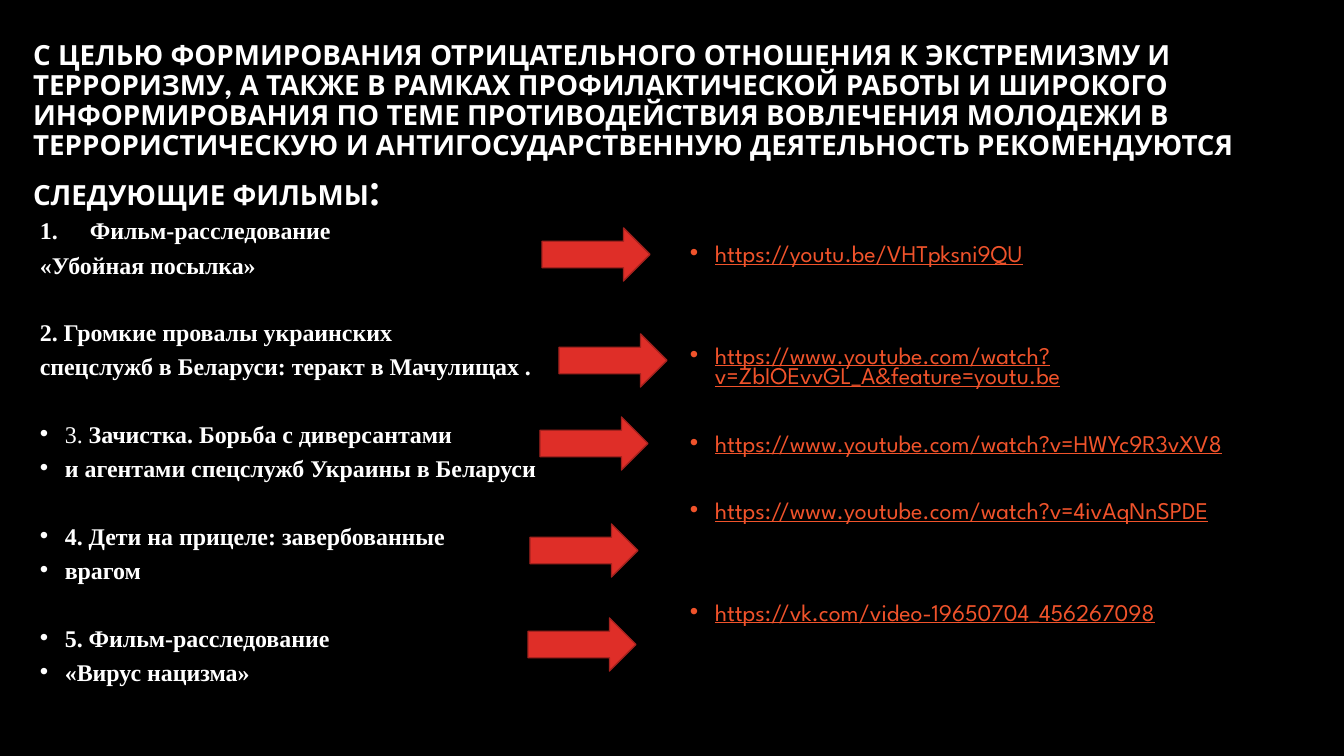
from lxml import etree
from pptx import Presentation
from pptx.dml.color import RGBColor
from pptx.enum.shapes import MSO_SHAPE
from pptx.enum.text import MSO_ANCHOR, MSO_AUTO_SIZE, PP_ALIGN
from pptx.oxml.ns import qn
from pptx.util import Emu, Pt

ARROW = MSO_SHAPE.RIGHT_ARROW
TOP, MIDDLE = MSO_ANCHOR.TOP, MSO_ANCHOR.MIDDLE
LEFT = PP_ALIGN.LEFT
FIXED = MSO_AUTO_SIZE.NONE

SANS, SERIF = "League Spartan", "Times New Roman"
BLACK, WHITE, LINK, RED, EDGE = "000000", "FFFFFF", "F0532B", "DF2E28", "A5221E"

HEAD = (
    "С ЦЕЛЬЮ ФОРМИРОВАНИЯ ОТРИЦАТЕЛЬНОГО ОТНОШЕНИЯ К ЭКСТРЕМИЗМУ И "
    "ТЕРРОРИЗМУ, А ТАКЖЕ В РАМКАХ ПРОФИЛАКТИЧЕСКОЙ РАБОТЫ И ШИРОКОГО "
    "ИНФОРМИРОВАНИЯ ПО ТЕМЕ ПРОТИВОДЕЙСТВИЯ ВОВЛЕЧЕНИЯ МОЛОДЕЖИ В "
    "ТЕРРОРИСТИЧЕСКУЮ И АНТИГОСУДАРСТВЕННУЮ ДЕЯТЕЛЬНОСТЬ РЕКОМЕНДУЮТСЯ "
    "СЛЕДУЮЩИЕ ФИЛЬМЫ"
)
NEAR, WIDE, FAR = 10, 34, 58
FILMS = [
    (0, "num", "", "Фильм-расследование"),
    (NEAR, None, "", "«Убойная посылка»"),
    (WIDE, None, "", "2. Громкие провалы украинских"),
    (NEAR, None, "", "спецслужб в Беларуси: теракт в Мачулищах ."),
    (WIDE, "dot", "3. ", "Зачистка. Борьба с диверсантами"),
    (NEAR, "dot", "", "и агентами спецслужб Украины в Беларуси"),
    (WIDE, "dot", "", "4. Дети на прицеле: завербованные"),
    (NEAR, "dot", "", "врагом"),
    (WIDE, "dot", "", "5. Фильм-расследование"),
    (NEAR, "dot", "", "«Вирус нацизма»"),
]
LINKS = [
    (0, "https://youtu.be/VHTpksni9QU"),
    (FAR, "https://www.youtube.com/watch?v=ZbIOEvvGL_A&feature=youtu.be"),
    (WIDE, "https://www.youtube.com/watch?v=HWYc9R3vXV8"),
    (WIDE, "https://www.youtube.com/watch?v=4ivAqNnSPDE"),
    (FAR, "https://vk.com/video-19650704_456267098"),
]
ARROWS = [(542, 228), (559, 334), (540, 417), (530, 524), (528, 618)]
INDENT = {"num": 50, "dot": 25}


def px(n):
    return Emu(round(n * 12192000 / 1344))


def color(code):
    return RGBColor.from_string(code)


def write(para, text, size=17.1, face=SERIF, ink=WHITE, bold=False, line=False):
    run = para.add_run()
    run.text = text
    font = run.font
    font.size, font.name, font.bold, font.underline = Pt(size), face, bold, line
    font.color.rgb = color(ink)


def mark(para, kind):
    props = para._p.get_or_add_pPr()
    depth = px(INDENT[kind])
    props.set("marL", str(depth))
    props.set("indent", str(-depth))
    if kind == "num":
        etree.SubElement(props, qn("a:buAutoNum"), type="arabicPeriod")
    else:
        etree.SubElement(props, qn("a:buFont"), typeface="Arial")
        etree.SubElement(props, qn("a:buChar"), char="•")


def setup(frame, anchor):
    frame.word_wrap = True
    frame.auto_size = FIXED
    frame.vertical_anchor = anchor


def column(slide, box, rows):
    frame = slide.shapes.add_textbox(*map(px, box)).text_frame
    setup(frame, TOP)
    for i, (gap, kind, parts) in enumerate(rows):
        para = frame.add_paragraph() if i else frame.paragraphs[0]
        if kind:
            mark(para, kind)
        para.line_spacing = 0.7
        para.space_before = Pt(gap)
        for text, style in parts:
            write(para, text, **style)


def main():
    deck = Presentation()
    deck.slide_width, deck.slide_height = px(1344), px(756)
    slide = deck.slides.add_slide(deck.slide_layouts[5])
    slide.background.fill.solid()
    slide.background.fill.fore_color.rgb = color(BLACK)

    title = slide.shapes.title
    title.left, title.top, title.width, title.height = map(px, (23, 31, 1245, 196))
    setup(title.text_frame, MIDDLE)
    para = title.text_frame.paragraphs[0]
    para.alignment = LEFT
    para.line_spacing = 0.9
    write(para, HEAD, size=19.8, face=SANS, bold=True)
    write(para, ":", size=36, face=SANS)

    films = []
    for gap, kind, lead, text in FILMS:
        parts = [(lead, {})] if lead else []
        films.append((gap, kind, parts + [(text, {"bold": True})]))
    column(slide, (30, 219, 636, 494), films)

    style = {"face": SANS, "ink": LINK, "line": True}
    links = [(gap, "dot", [(text, style)]) for gap, text in LINKS]
    column(slide, (680, 242, 588, 444), links)

    for x, y in ARROWS:
        arrow = slide.shapes.add_shape(ARROW, px(x), px(y), px(108), px(53))
        arrow.shadow.inherit = False
        arrow.fill.solid()
        arrow.fill.fore_color.rgb = color(RED)
        arrow.line.color.rgb = color(EDGE)
        arrow.line.width = Pt(1)

    deck.save("out.pptx")


if __name__ == "__main__":
    main()
